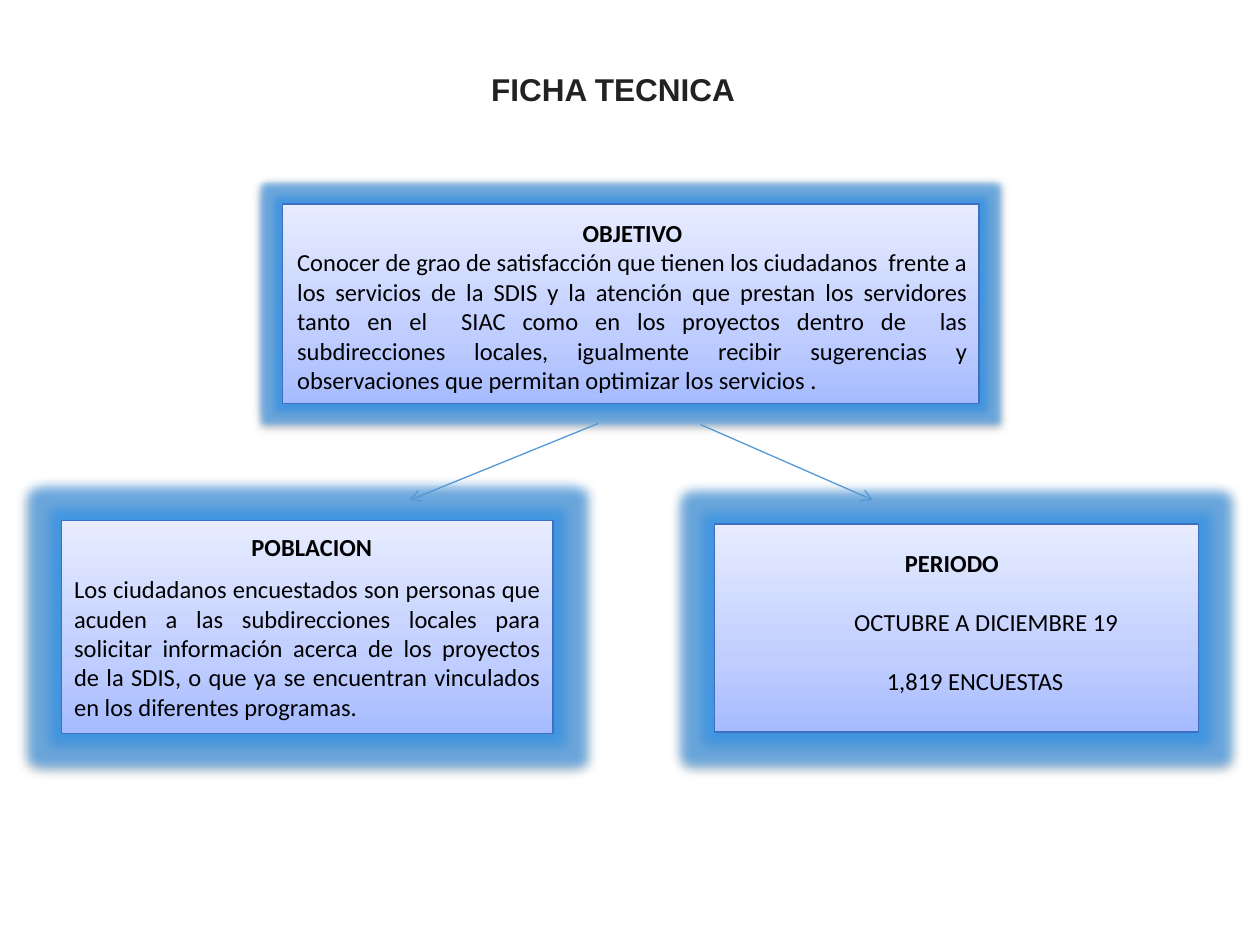
from dataclasses import dataclass

from lxml import etree
from pptx import Presentation
from pptx.dml.color import RGBColor
from pptx.enum.shapes import MSO_CONNECTOR, MSO_SHAPE
from pptx.enum.text import MSO_ANCHOR, PP_ALIGN
from pptx.oxml import parse_xml
from pptx.oxml.ns import nsdecls, qn
from pptx.util import Inches, Pt

RECT = MSO_SHAPE.RECTANGLE
LINE = MSO_CONNECTOR.STRAIGHT
MIDDLE = MSO_ANCHOR.MIDDLE
TOP = MSO_ANCHOR.TOP
LEFT = PP_ALIGN.LEFT
CENTER = PP_ALIGN.CENTER
JUSTIFY = PP_ALIGN.JUSTIFY


@dataclass(frozen=True)
class Theme:
    ink: str = "000000"
    title: str = "222222"
    edge: str = "3F6FC3"
    arrow: str = "5698D3"
    glow: str = "2F92EA"
    stops: tuple = ((0, "A6BBFF"), (35, "C0CEFF"), (100, "E7ECFF"))
    body: str = "Calibri"
    head: str = "Arial"
    size: int = 14
    big: int = 18
    width: float = 0.75


THEME = Theme()


def color(code):
    return RGBColor.from_string(code)


def tint(tag, code, alpha, **attrs):
    extra = " ".join(f'{key}="{value}"' for key, value in attrs.items())
    return parse_xml(
        f'<a:{tag} {nsdecls("a")} {extra}><a:srgbClr val="{code}">'
        f'<a:alpha val="{alpha * 1000}"/></a:srgbClr></a:{tag}>'
    )


def add_panel(slide, area, glow):
    shape = slide.shapes.add_shape(RECT, *map(Inches, area))
    shape.fill.gradient()
    shape.fill.gradient_angle = 90
    stops = shape._element.spPr.find(".//" + qn("a:gsLst"))
    for stop in list(stops):
        stops.remove(stop)
    for spot, code in THEME.stops:
        stops.append(tint("gs", code, 100, pos=spot * 1000))
    shape.line.color.rgb = color(THEME.edge)
    shape.line.width = Pt(THEME.width)
    shape.shadow.inherit = False
    effects = shape._element.spPr.find(qn("a:effectLst"))
    effects.append(tint("glow", THEME.glow, 60, rad=Pt(glow)))
    effects.append(tint("outerShdw", THEME.ink, 38, blurRad=Pt(3.1),
                        dist=Pt(1.6), dir=5400000, rotWithShape=0))
    return shape


def add_box(slide, area):
    return slide.shapes.add_textbox(*map(Inches, area))


def set_frame(shape, anchor=TOP):
    frame = shape.text_frame
    frame.word_wrap = True
    frame.vertical_anchor = anchor
    return frame


def add_text(frame, text, align=LEFT, bold=False, size=THEME.size,
             font=THEME.body, ink=THEME.ink, gap=0, indent=0):
    first = frame.paragraphs[0]
    para = frame.add_paragraph() if first.runs else first
    para.alignment = align
    if gap:
        para.space_before = Pt(gap)
    if indent:
        para._p.get_or_add_pPr().set("marL", str(Inches(indent)))
    run = para.add_run()
    run.text = text
    run.font.name = font
    run.font.size = Pt(size)
    run.font.bold = bold
    run.font.color.rgb = color(ink)


def add_arrow(slide, start, end):
    link = slide.shapes.add_connector(LINE, *map(Inches, start + end))
    link.line.color.rgb = color(THEME.arrow)
    link.line.width = Pt(THEME.width)
    etree.SubElement(link.line._get_or_add_ln(), qn("a:tailEnd"), type="arrow")
    etree.SubElement(link._element.spPr, qn("a:effectLst"))


def add_goal(slide):
    add_panel(slide, (2.24, 1.62, 5.53, 1.58), 8)
    frame = set_frame(add_box(slide, (2.26, 1.68, 5.52, 1.51)))
    add_text(frame, "OBJETIVO", align=CENTER, bold=True)
    add_text(
        frame,
        "Conocer de grao de satisfacción que tienen los ciudadanos  frente a "
        "los servicios de la SDIS y la atención que prestan los servidores "
        "tanto en el  SIAC como en los proyectos dentro de  las "
        "subdirecciones locales, igualmente recibir sugerencias y "
        "observaciones que permitan optimizar los servicios .",
        align=JUSTIFY,
    )


def add_people(slide):
    panel = add_panel(slide, (0.49, 4.13, 3.9, 1.69), 12.5)
    frame = set_frame(panel, MIDDLE)
    add_text(frame, "POBLACION", align=CENTER, bold=True, indent=0.07)
    add_text(
        frame,
        "Los ciudadanos encuestados son personas que acuden a las "
        "subdirecciones locales para solicitar información acerca de los "
        "proyectos de la SDIS, o que ya se encuentran vinculados en los "
        "diferentes programas.",
        align=JUSTIFY, gap=7,
    )


def add_period(slide):
    add_panel(slide, (5.67, 4.16, 3.84, 1.65), 12.5)
    frame = set_frame(add_box(slide, (5.84, 4.3, 3.43, 2.69)))
    add_text(frame, "PERIODO", align=CENTER, bold=True)
    add_text(frame, "OCTUBRE A DICIEMBRE 19", gap=17, indent=0.84)
    add_text(frame, "1,819 ENCUESTAS", gap=17, indent=1.1)


def main():
    deck = Presentation()
    deck.slide_width, deck.slide_height = Inches(10), Inches(7.5)
    slide = deck.slides.add_slide(deck.slide_layouts[6])
    add_goal(slide)
    add_people(slide)
    add_period(slide)
    add_arrow(slide, (4.75, 3.36), (3.25, 3.97))
    add_arrow(slide, (5.56, 3.37), (6.93, 3.97))
    title = set_frame(add_box(slide, (3.8, 0.51, 5.71, 0.4)), MIDDLE)
    add_text(title, "FICHA TECNICA", bold=True, size=THEME.big,
             font=THEME.head, ink=THEME.title)
    deck.save("out.pptx")


if __name__ == "__main__":
    main()
